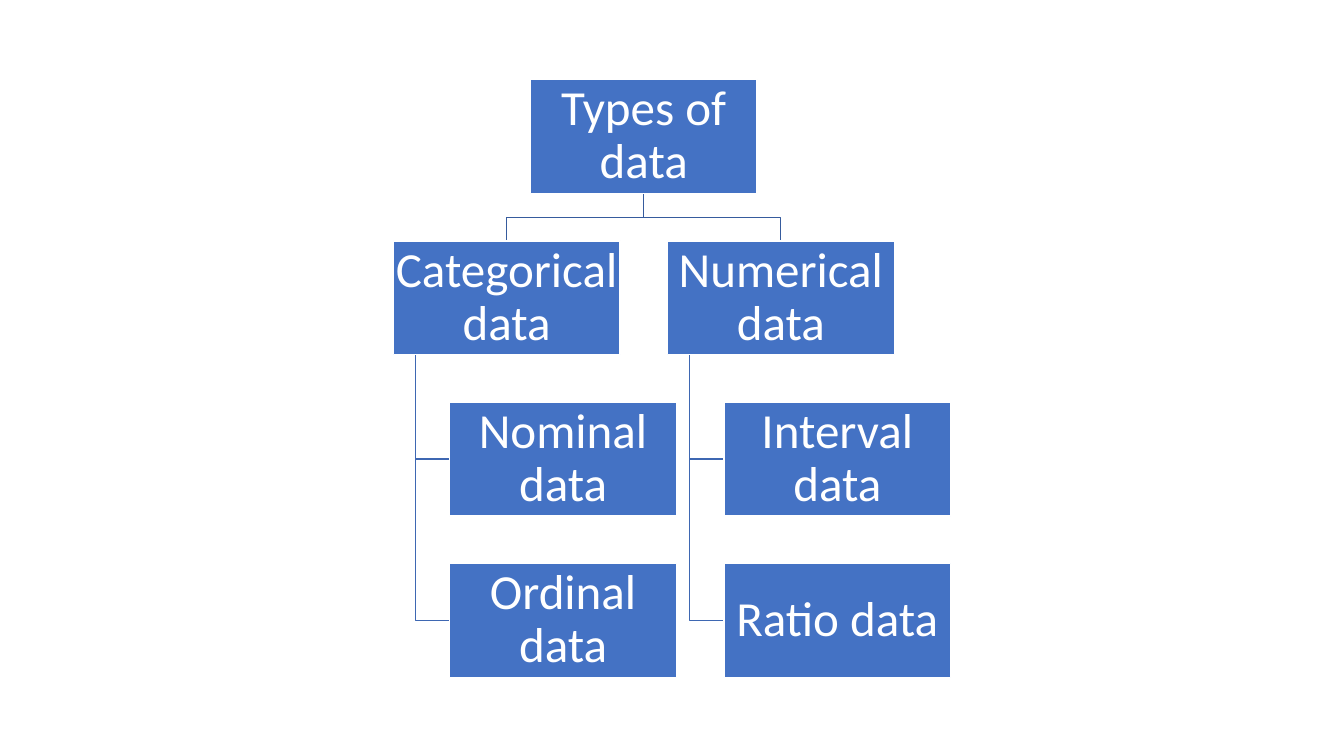
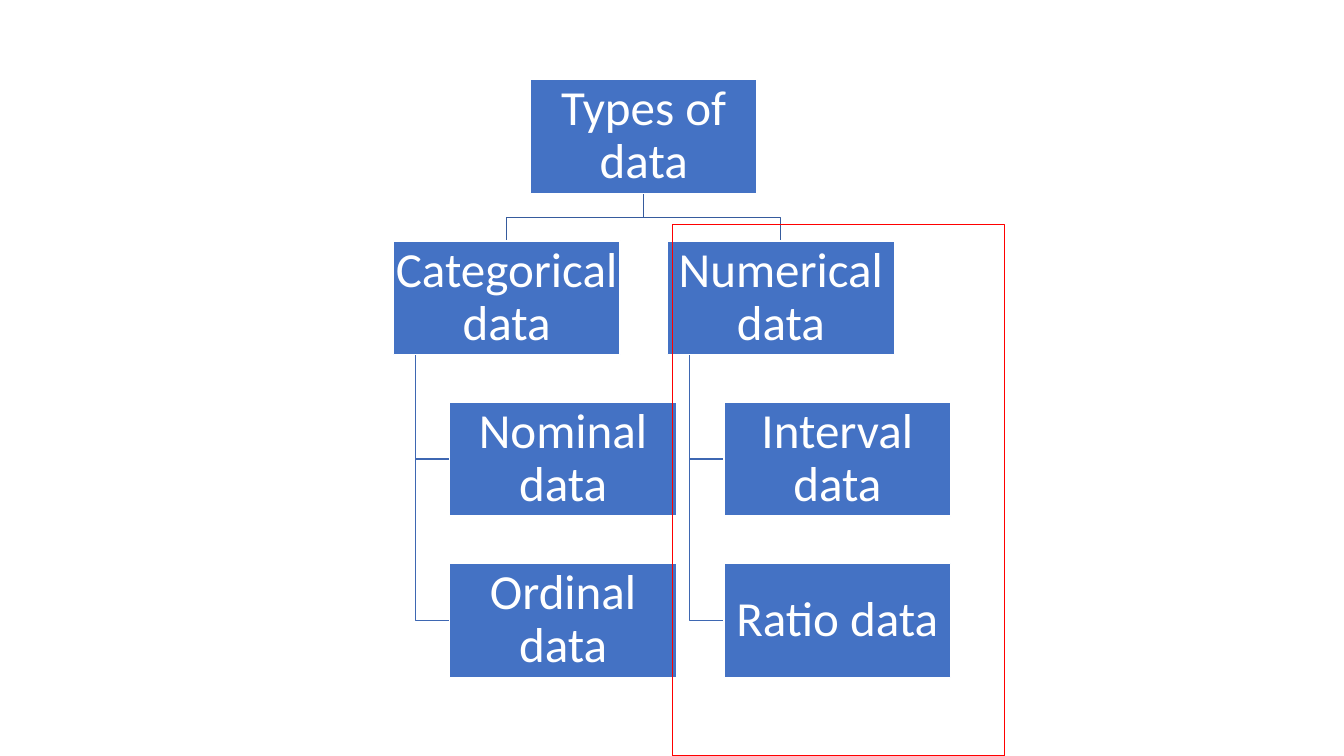
from dataclasses import dataclass

from pptx import Presentation
from pptx.dml.color import RGBColor
from pptx.enum.shapes import MSO_SHAPE
from pptx.enum.text import MSO_ANCHOR, PP_ALIGN
from pptx.util import Inches, Pt

RECT = MSO_SHAPE.RECTANGLE
MIDDLE = MSO_ANCHOR.MIDDLE
CENTER = PP_ALIGN.CENTER

BLUE, WHITE, RED = "4472C4", "FFFFFF", "FF0000"
ROOT_LINE, LEAF_LINE = "365B9D", "3E67B2"
FONT, FONT_SIZE = "Calibri", 35
LINE_WIDTH = 1

BOX_W, BOX_H = 2.25, 1.13
TOP, ROW_STEP = 0.79, 1.6
LEFT, COLUMN_STEP = 3.9, 2.72
LEAF_INDENT, TRUNK_INDENT = 0.56, 0.22
INSET = 0.02


@dataclass(frozen=True)
class Branch:
    title: str
    leaves: tuple[str, ...]


@dataclass(frozen=True)
class Box:
    text: str
    left: float
    row: int

    @property
    def top(self) -> float:
        return TOP + self.row * ROW_STEP

    @property
    def bottom(self) -> float:
        return self.top + BOX_H

    @property
    def center(self) -> float:
        return self.left + BOX_W / 2

    @property
    def middle(self) -> float:
        return self.top + BOX_H / 2


ROOT = "Types of data"
BRANCHES = (
    Branch("Categorical data", ("Nominal data", "Ordinal data")),
    Branch("Numerical data", ("Interval data", "Ratio data")),
)


def rgb(color: str) -> RGBColor:
    return RGBColor.from_string(color)


def style_outline(sp, color: str) -> None:
    sp.shadow.inherit = False
    sp.line.color.rgb = rgb(color)
    sp.line.width = Pt(LINE_WIDTH)


def add_path(s, points: list[tuple[float, float]], color: str) -> None:
    """Draw an open, unfilled line through the points, given in inches."""
    start, *rest = [(Inches(x), Inches(y)) for x, y in points]
    builder = s.shapes.build_freeform(*start)
    builder.add_line_segments(rest, close=False)
    sp = builder.convert_to_shape()
    sp.fill.background()
    style_outline(sp, color)


def add_box(s, box: Box) -> None:
    sp = s.shapes.add_shape(RECT, Inches(box.left), Inches(box.top),
                            Inches(BOX_W), Inches(BOX_H))
    sp.fill.solid()
    sp.fill.fore_color.rgb = rgb(BLUE)
    style_outline(sp, WHITE)
    tf = sp.text_frame
    tf.text = box.text
    tf.word_wrap = True
    tf.vertical_anchor = MIDDLE
    tf.margin_left = tf.margin_right = Inches(INSET)
    tf.margin_top = tf.margin_bottom = Inches(INSET)
    p = tf.paragraphs[0]
    p.alignment = CENTER
    p.line_spacing = 0.9
    font = p.runs[0].font
    font.name = FONT
    font.size = Pt(FONT_SIZE)
    font.color.rgb = rgb(WHITE)


def add_data_tree(s) -> None:
    """Draw the lines first, then the boxes over their ends."""
    root = Box(ROOT, LEFT + COLUMN_STEP * (len(BRANCHES) - 1) / 2, 0)
    boxes = [root]
    for column, branch in enumerate(BRANCHES):
        parent = Box(branch.title, LEFT + column * COLUMN_STEP, 1)
        boxes.append(parent)
        bend = (root.bottom + parent.top) / 2
        add_path(s, [(root.center, root.bottom), (root.center, bend),
                     (parent.center, bend), (parent.center, parent.top)],
                 ROOT_LINE)
        trunk = parent.left + TRUNK_INDENT
        for row, text in enumerate(branch.leaves, start=2):
            leaf = Box(text, parent.left + LEAF_INDENT, row)
            boxes.append(leaf)
            add_path(s, [(trunk, parent.bottom), (trunk, leaf.middle),
                         (leaf.left, leaf.middle)], LEAF_LINE)
    for box in boxes:
        add_box(s, box)


def add_highlight(s, left: float, top: float, width: float, height: float) -> None:
    sp = s.shapes.add_shape(RECT, Inches(left), Inches(top),
                            Inches(width), Inches(height))
    sp.fill.background()
    style_outline(sp, RED)


def main() -> None:
    prs = Presentation()
    prs.slide_width, prs.slide_height = Inches(13.33), Inches(7.5)
    blank = prs.slide_layouts[6]
    overview, numerical = (prs.slides.add_slide(blank) for _ in range(2))
    for s in (overview, numerical):
        add_data_tree(s)
    add_highlight(numerical, 6.67, 2.23, 3.29, 5.27)
    prs.save("out.pptx")


if __name__ == "__main__":
    main()
